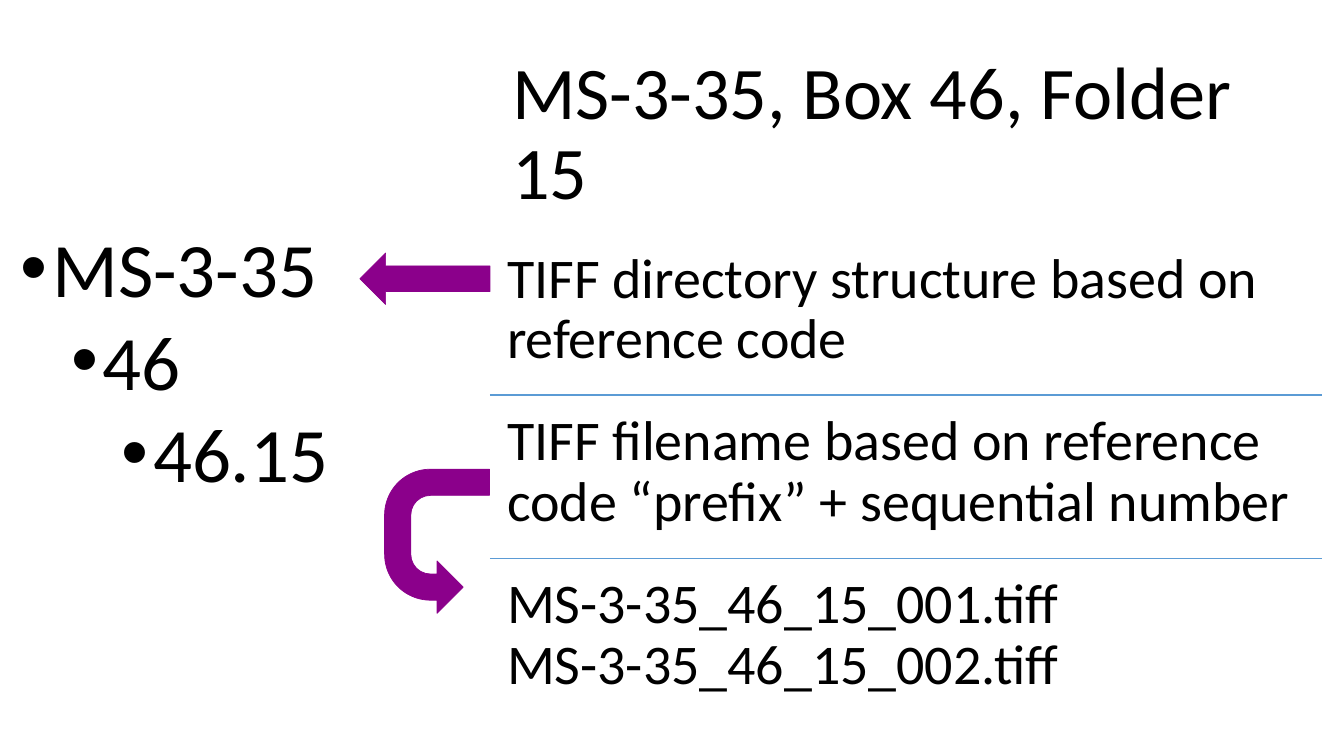
from lxml import etree
from pptx import Presentation
from pptx.dml.color import RGBColor
from pptx.enum.shapes import MSO_CONNECTOR, MSO_SHAPE
from pptx.enum.text import MSO_ANCHOR, PP_ALIGN
from pptx.oxml.ns import qn
from pptx.util import Pt

STRAIGHT = MSO_CONNECTOR.STRAIGHT
RIGHT_ARROW = MSO_SHAPE.RIGHT_ARROW
UTURN_ARROW = MSO_SHAPE.U_TURN_ARROW
TOP = MSO_ANCHOR.TOP
LEFT = PP_ALIGN.LEFT

EMU_PER_PX = 9144
BLANK = 6
FONT = "Calibri"
INK = "000000"
RULE = "5B9BD5"
PURPLE = "8B008B"


def px(length):
    return length * EMU_PER_PX


def color(hex_value):
    return RGBColor.from_string(hex_value)


class SlideBuilder:
    def __init__(self, slide):
        self.shapes = slide.shapes

    def frame(self, left, top, width, height, inset_x, inset_y):
        box = self.shapes.add_textbox(px(left), px(top), px(width), px(height))
        frame = box.text_frame
        frame.word_wrap = True
        frame.vertical_anchor = TOP
        frame.margin_left = frame.margin_right = px(inset_x)
        frame.margin_top = frame.margin_bottom = px(inset_y)
        return frame

    def span(self, para, text, size):
        span = para.add_run()
        span.text = text
        span.font.name = FONT
        span.font.size = Pt(size)
        span.font.color.rgb = color(INK)

    def text(self, left, top, width, height, inset, lines, size):
        para = self.frame(left, top, width, height, inset, inset).paragraphs[0]
        para.alignment = LEFT
        para.line_spacing = 0.9
        for index, line in enumerate(lines):
            if index:
                para.add_line_break()
            self.span(para, line, size)

    def outline(self, left, top, width, height, entries, size):
        frame = self.frame(left, top, width, height, 10, 5)
        for level, entry in enumerate(entries):
            para = frame.add_paragraph() if level else frame.paragraphs[0]
            para.level = level
            self.span(para, entry, size)
            properties = para._p.get_or_add_pPr()
            properties.set("marL", str(px(31 + 50 * level)))
            properties.set("indent", str(px(-31)))
            etree.SubElement(properties, qn("a:buFont")).set("typeface", "Arial")
            etree.SubElement(properties, qn("a:buChar")).set("char", "•")

    def rule(self, left, top, width):
        line = self.shapes.add_connector(
            STRAIGHT, px(left), px(top), px(left + width), px(top))
        line.line.color.rgb = color(RULE)
        line.line.width = Pt(1)
        etree.SubElement(line._element.spPr, qn("a:effectLst"))

    def arrow(self, kind, left, top, width, height, rotation, flipped=False):
        arrow = self.shapes.add_shape(kind, px(left), px(top), px(width), px(height))
        arrow.shadow.inherit = False
        arrow.rotation = rotation
        arrow.fill.solid()
        arrow.fill.fore_color.rgb = color(PURPLE)
        arrow.line.color.rgb = color(PURPLE)
        arrow.line.width = Pt(0.5)
        if flipped:
            arrow._element.spPr.find(qn("a:xfrm")).set("flipH", "1")


def main():
    deck = Presentation()
    deck.slide_width = px(1333)
    deck.slide_height = px(750)
    page = SlideBuilder(deck.slides.add_slide(deck.slide_layouts[BLANK]))

    column_left, column_width = 486, 825
    page.text(column_left, 33, column_width, 198, 22, ["MS-3-35, Box 46, Folder 15"], 53)

    sections = [
        ["TIFF directory structure based on reference code"],
        ["TIFF filename based on reference code “prefix” + sequential number"],
        ["MS-3-35_46_15_001.tiff", "MS-3-35_46_15_002.tiff"],
    ]
    for index, lines in enumerate(sections):
        top = 231 + 323 * index // 2
        if index:
            page.rule(column_left, top, column_width)
        page.text(column_left, top, column_width, 161, 17, lines, 40)

    page.outline(11, 214, 475, 288, ["MS-3-35", "46", "46.15"], 55)
    page.arrow(RIGHT_ARROW, 357, 251, 129, 51, 180)
    page.arrow(UTURN_ARROW, 362, 485, 143, 104, 270, flipped=True)

    deck.save("out.pptx")


if __name__ == "__main__":
    main()
